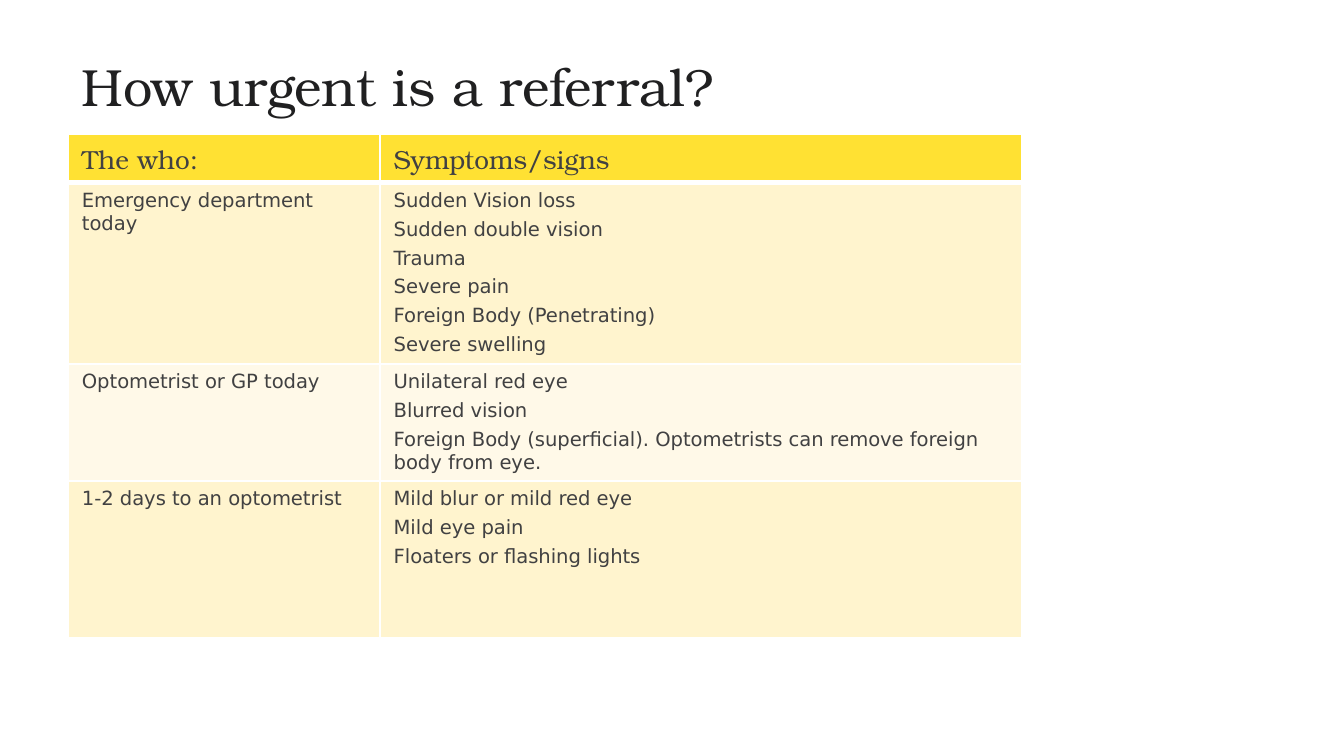
"""Build a slide with a table of referral urgency by symptoms."""
import pptx
import pptx.dml.color
import pptx.enum.text
import pptx.oxml
import pptx.oxml.ns
import pptx.util

Inches, Pt = pptx.util.Inches, pptx.util.Pt
RGBColor = pptx.dml.color.RGBColor

TITLE = "How urgent is a referral?"
ROWS = [
    (["The who:"], ["Symptoms/signs"]),
    (["Emergency department today"],
     ["Sudden Vision loss", "Sudden double vision", "Trauma", "Severe pain",
      "Foreign Body (Penetrating)", "Severe swelling"]),
    (["Optometrist or GP today"],
     ["Unilateral red eye", "Blurred vision",
      "Foreign Body (superficial). Optometrists can remove foreign body from eye."]),
    (["1-2 days to an optometrist"],
     ["Mild blur or mild red eye", "Mild eye pain", "Floaters or flashing lights"]),
]

SLIDE_W = 10
SLIDE_H = SLIDE_W * 9 / 16
LEFT = 0.51
TABLE_TOP = 1
COL_WIDTHS = [2.32, 4.77]
ROW_HEIGHTS = [0.36, 1.34, 0.87, 1.17]

SERIF, SANS = "TeX Gyre Bonum", "DejaVu Sans"
INK = RGBColor(0x20, 0x20, 0x21)
GREY = RGBColor(0x41, 0x41, 0x42)
YELLOW = RGBColor(0xFF, 0xE1, 0x33)
BANDS = [RGBColor(0xFF, 0xF9, 0xE8), RGBColor(0xFF, 0xF4, 0xCE)]
WHITE = RGBColor(0xFF, 0xFF, 0xFF)


def write(tf, lines, font, size, color, gap=0):
    for i, line in enumerate(lines):
        p = tf.paragraphs[0] if i == 0 else tf.add_paragraph()
        if i:
            p.space_before = Pt(gap)
        r = p.add_run()
        r.text = line
        r.font.name, r.font.size = font, Pt(size)
        r.font.bold = False
        r.font.color.rgb = color


def set_borders(cell, top, bottom):
    tc_pr = cell._tc.get_or_add_tcPr()
    widths = {"L": 1, "R": 1, "T": top, "B": bottom}
    for i, (side, width) in enumerate(widths.items()):
        tc_pr.insert(i, pptx.oxml.parse_xml(
            f'<a:ln{side} {pptx.oxml.ns.nsdecls("a")} w="{Pt(width)}">'
            f'<a:solidFill><a:srgbClr val="{WHITE}"/></a:solidFill></a:ln{side}>'))


def add_title(s):
    box = s.shapes.add_textbox(Inches(LEFT), Inches(0.34),
                               Inches(SLIDE_W - 2 * LEFT), Inches(0.59))
    tf = box.text_frame
    tf.word_wrap = True
    tf.vertical_anchor = pptx.enum.text.MSO_ANCHOR.MIDDLE
    write(tf, [TITLE], SERIF, 28, INK)


def add_referral_table(s):
    table = s.shapes.add_table(
        len(ROWS), len(COL_WIDTHS), Inches(LEFT), Inches(TABLE_TOP),
        Inches(sum(COL_WIDTHS)), Inches(sum(ROW_HEIGHTS))).table
    for col, width in zip(table.columns, COL_WIDTHS):
        col.width = Inches(width)
    for i, (row, height, texts) in enumerate(zip(table.rows, ROW_HEIGHTS, ROWS)):
        row.height = Inches(height)
        for cell, lines in zip(row.cells, texts):
            cell.margin_left = cell.margin_right = Inches(0.1)
            cell.margin_top, cell.margin_bottom = Inches(0.05), Inches(0.03)
            cell.fill.solid()
            cell.fill.fore_color.rgb = BANDS[i % 2] if i else YELLOW
            set_borders(cell, top=3 if i == 1 else 1, bottom=1 if i else 3)
            font, size = (SANS, 10.5) if i else (SERIF, 14)
            write(cell.text_frame, lines, font, size, GREY, gap=0.3 * size)


def main():
    prs = pptx.Presentation()
    prs.slide_width, prs.slide_height = Inches(SLIDE_W), Inches(SLIDE_H)
    s = prs.slides.add_slide(prs.slide_layouts[6])
    add_title(s)
    add_referral_table(s)
    prs.save("out.pptx")


if __name__ == "__main__":
    main()
